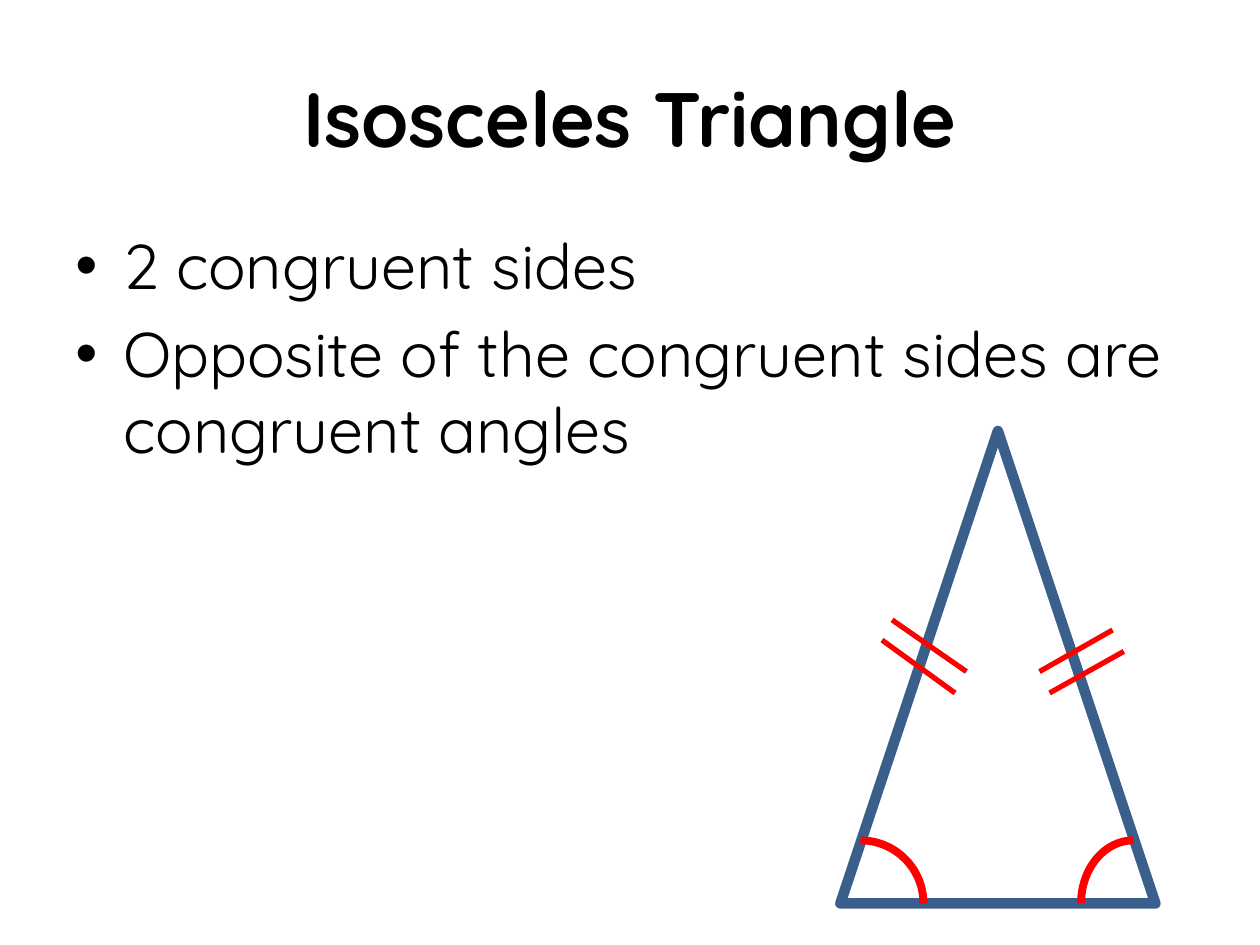
from lxml.etree import SubElement
from pptx import Presentation
from pptx.dml.color import RGBColor as RGB
from pptx.enum.shapes import MSO_CONNECTOR as Link, MSO_SHAPE as Kind
from pptx.enum.text import MSO_ANCHOR as Anchor, PP_ALIGN as Align
from pptx.oxml.ns import qn
from pptx.util import Inches, Pt

COLORS = {"text": "000000", "side": "3A5F8C", "mark": "FF0000"}


class Board:
    """Holds the style and the current slide."""
    font = "Quicksand"

    def __init__(self, slide):
        self.slide = slide

    def text(self, box, lines, size, bold=False, bullet=False):
        frame = self.slide.shapes.add_textbox(*map(Inches, box)).text_frame
        frame.word_wrap = True
        frame.vertical_anchor = Anchor.TOP if bullet else Anchor.MIDDLE
        frame.text = "\n".join(lines)
        for par in frame.paragraphs:
            par.alignment = Align.LEFT if bullet else Align.CENTER
            font = par.font
            font.name, font.size, font.bold = self.font, Pt(size), bold
            font.color.rgb = RGB.from_string(COLORS["text"])
            if bullet:
                self.bullet(par, size)

    def bullet(self, par, size):
        par.space_before = Pt(round(size * 0.2))
        props = par._p.get_or_add_pPr()
        props.set("marL", str(Inches(0.38)))
        props.set("indent", str(Inches(-0.38)))
        font = SubElement(props, qn("a:buFont"))
        font.set("typeface", "Arial")
        SubElement(props, qn("a:buChar")).set("char", "•")
        # The schema wants the bullet ahead of the default run style
        props.append(props.find(qn("a:defRPr")))

    def ink(self, item, color, width):
        item.line.color.rgb = RGB.from_string(COLORS[color])
        item.line.width = Pt(width)

    def shape(self, kind, box, color, width, flip=False):
        item = self.slide.shapes.add_shape(kind, *map(Inches, box))
        item.shadow.inherit = False
        item.fill.background()
        self.ink(item, color, width)
        if flip:
            item._element.spPr.find(qn("a:xfrm")).set("flipH", "1")

    def line(self, ends, color, width):
        item = self.slide.shapes.add_connector(Link.STRAIGHT, *map(Inches, ends))
        self.ink(item, color, width)
        SubElement(item._element.spPr, qn("a:effectLst"))


def main():
    deck = Presentation()
    deck.slide_width, deck.slide_height = Inches(10), Inches(7.5)
    board = Board(deck.slides.add_slide(deck.slide_layouts[6]))

    # Title and facts
    board.text((0.5, 0.3, 9, 1.25), ["Isosceles Triangle"], 44, bold=True)
    facts = ["2 congruent sides",
             "Opposite of the congruent sides are congruent angles"]
    board.text((0.5, 1.75, 9, 4.95), facts, 36, bullet=True)

    # Triangle
    board.shape(Kind.ISOSCELES_TRIANGLE, (6.67, 3.42, 2.5, 3.75), "side", 6)

    # Double ticks on the equal sides
    for ends in [(7, 5.08, 7.58, 5.5), (7.08, 4.92, 7.67, 5.33),
                 (8.83, 5, 8.25, 5.33), (8.92, 5.17, 8.33, 5.5)]:
        board.line(ends, "mark", 3)

    # Arcs in the equal angles
    for left, width, flip in [(6.33, 1, False), (8.58, 0.83, True)]:
        board.shape(Kind.ARC, (left, 6.67, width, 1), "mark", 4.5, flip)

    deck.save("out.pptx")


if __name__ == "__main__":
    main()
